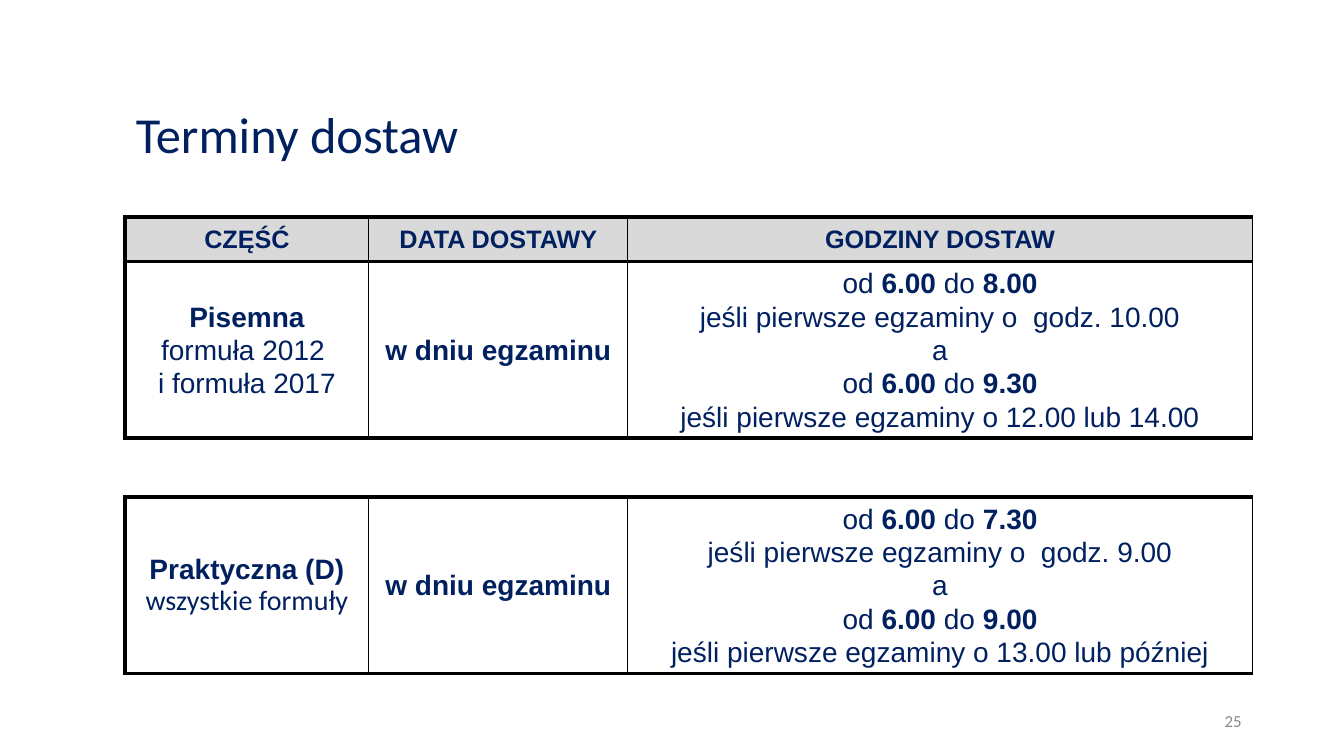
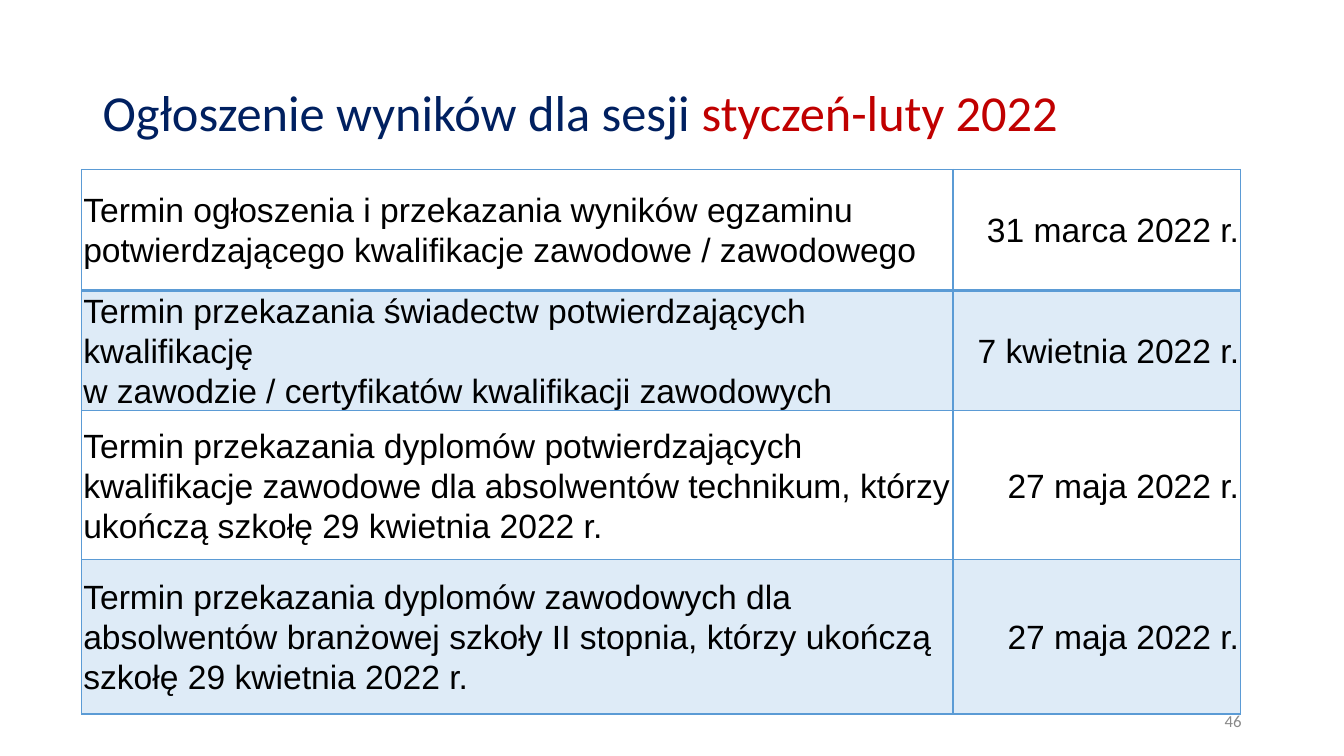
from dataclasses import dataclass

from lxml.etree import SubElement
from pptx import Presentation
from pptx.dml.color import RGBColor
from pptx.enum.text import MSO_ANCHOR, PP_ALIGN
from pptx.oxml.ns import qn
from pptx.slide import Slide
from pptx.table import _Cell
from pptx.text.text import _Paragraph
from pptx.util import Pt

NAVY = RGBColor(0x00, 0x20, 0x60)
RED = RGBColor(0xC0, 0x00, 0x00)
GREY = RGBColor(0x89, 0x89, 0x89)
LIGHT_GREY = RGBColor(0xD9, 0xD9, 0xD9)
BLACK = RGBColor(0x00, 0x00, 0x00)
BLUE = RGBColor(0x5B, 0x9B, 0xD5)
LIGHT_BLUE = RGBColor(0xDE, 0xEB, 0xF7)

HEADING_FONT = "Calibri"
BODY_FONT = "Arial"
LINE_PITCH = 1.19


@dataclass(frozen=True)
class Line:
    """A paragraph; text between asterisks is bold, a newline is a line break."""
    text: str
    font: str = BODY_FONT


@dataclass(frozen=True)
class CellStyle:
    size: float
    color: RGBColor
    border_color: RGBColor
    left: float
    right: float
    top: float
    bottom: float
    side_margin: float
    end_margin: float = 0
    fill: RGBColor | None = None
    align: PP_ALIGN = PP_ALIGN.CENTER


@dataclass(frozen=True)
class Cell:
    lines: tuple[Line, ...]
    style: CellStyle


@dataclass(frozen=True)
class Grid:
    left: float
    top: float
    columns: tuple[float, ...]
    rows: tuple[float, ...]
    cells: list[list[Cell]]


def add_text_box(slide: Slide, left: float, top: float, width: float,
                 height: float) -> _Paragraph:
    """Add a wrapped, vertically centred box and return its first paragraph."""
    frame = slide.shapes.add_textbox(Pt(left), Pt(top), Pt(width), Pt(height)).text_frame
    frame.word_wrap = True
    frame.vertical_anchor = MSO_ANCHOR.MIDDLE
    return frame.paragraphs[0]


def add_title(slide: Slide, left: float, top: float,
              parts: list[tuple[str, RGBColor]]) -> None:
    paragraph = add_text_box(slide, left, top, 800, 56)
    paragraph.font.name = HEADING_FONT
    paragraph.font.size = Pt(36)
    for text, color in parts:
        run = paragraph.add_run()
        run.text = text
        run.font.color.rgb = color


def add_page_number(slide: Slide, number: int) -> None:
    paragraph = add_text_box(slide, 678, 500.4, 216, 28.8)
    paragraph.text = str(number)
    paragraph.alignment = PP_ALIGN.RIGHT
    paragraph.font.name = HEADING_FONT
    paragraph.font.size = Pt(12)
    paragraph.font.color.rgb = GREY


def set_borders(cell: _Cell, style: CellStyle) -> None:
    properties = cell._tc.get_or_add_tcPr()
    widths = {"L": style.left, "R": style.right, "T": style.top, "B": style.bottom}
    for side, width in widths.items():
        border = SubElement(properties, qn(f"a:ln{side}"), w=str(int(Pt(width))))
        fill = SubElement(border, qn("a:solidFill"))
        SubElement(fill, qn("a:srgbClr"), val=str(style.border_color))


def write_line(paragraph: _Paragraph, line: Line, style: CellStyle) -> None:
    paragraph.alignment = style.align
    paragraph.line_spacing = Pt(style.size * LINE_PITCH)
    paragraph.font.name = line.font
    paragraph.font.size = Pt(style.size)
    paragraph.font.color.rgb = style.color
    for part_index, part in enumerate(line.text.split("*")):
        for row_index, text in enumerate(part.split("\n")):
            if row_index:
                paragraph.add_line_break()
            if text:
                run = paragraph.add_run()
                run.text = text
                run.font.bold = part_index % 2 == 1


def fill_cell(cell: _Cell, content: Cell) -> None:
    style = content.style
    set_borders(cell, style)
    if style.fill is None:
        cell.fill.background()
    else:
        cell.fill.solid()
        cell.fill.fore_color.rgb = style.fill
    cell.vertical_anchor = MSO_ANCHOR.MIDDLE
    cell.margin_left = cell.margin_right = Pt(style.side_margin)
    cell.margin_top = cell.margin_bottom = Pt(style.end_margin)
    frame = cell.text_frame
    for index, line in enumerate(content.lines):
        paragraph = frame.add_paragraph() if index else frame.paragraphs[0]
        write_line(paragraph, line, style)


def add_grid(slide: Slide, grid: Grid) -> None:
    table = slide.shapes.add_table(
        len(grid.rows), len(grid.columns), Pt(grid.left), Pt(grid.top),
        Pt(sum(grid.columns)), Pt(sum(grid.rows))).table
    table.first_row = table.horz_banding = False
    for column, width in zip(table.columns, grid.columns):
        column.width = Pt(width)
    for row, height, contents in zip(table.rows, grid.rows, grid.cells):
        row.height = Pt(height)
        for cell, content in zip(row.cells, contents):
            fill_cell(cell, content)


def delivery_row(texts: list[tuple[Line, ...]], size: float,
                 fill: RGBColor | None = None) -> list[Cell]:
    """Build a row with thick lines on the left, above and below."""
    return [
        Cell(lines, CellStyle(size, NAVY, BLACK, 0.75 if column else 3, 0.75, 3, 3,
                              3.6, fill=fill))
        for column, lines in enumerate(texts)
    ]


def result_row(index: int, description: str, date: str) -> list[Cell]:
    top, bottom = (2 if index == 1 else 1), (2 if index == 0 else 1)
    fill = LIGHT_BLUE if index % 2 else None
    return [
        Cell((Line(text),), CellStyle(24, BLACK, BLUE, 1, 1, top, bottom, 1.2,
                                      fill=fill, align=align))
        for text, align in ((description, PP_ALIGN.LEFT), (date, PP_ALIGN.RIGHT))
    ]


DELIVERY_COLUMNS = (174.2, 185, 446)
DELIVERY_DAY = (Line("*w dniu egzaminu*"),)
DELIVERY_HEADER = [(Line(f"*{name}*"),)
                   for name in ("CZĘŚĆ", "DATA DOSTAWY", "GODZINY DOSTAW")]
WRITTEN_PART = [
    (Line("*Pisemna*\nformuła 2012 \ni formuła 2017"),),
    DELIVERY_DAY,
    (Line("od *6.00* do *8.00*\njeśli pierwsze egzaminy o  godz. 10.00"),
     Line("a\nod *6.00* do *9.30*\njeśli pierwsze egzaminy o 12.00 lub 14.00")),
]
PRACTICAL_PART = [
    (Line("*Praktyczna (D)*"), Line("wszystkie formuły", HEADING_FONT)),
    DELIVERY_DAY,
    (Line("od *6.00* do *7.30*\njeśli pierwsze egzaminy o  godz. 9.00"),
     Line("a\nod *6.00* do *9.00*\njeśli pierwsze egzaminy o 13.00 lub później")),
]
RESULTS = [
    ("Termin ogłoszenia i przekazania wyników egzaminu potwierdzającego "
     "kwalifikacje zawodowe / zawodowego", "31 marca 2022 r."),
    ("Termin przekazania świadectw potwierdzających kwalifikację \n"
     "w zawodzie / certyfikatów kwalifikacji zawodowych", "7 kwietnia 2022 r."),
    ("Termin przekazania dyplomów potwierdzających kwalifikacje zawodowe dla "
     "absolwentów technikum, którzy ukończą szkołę 29 kwietnia 2022 r.",
     "27 maja 2022 r."),
    ("Termin przekazania dyplomów zawodowych dla absolwentów branżowej szkoły "
     "II stopnia, którzy ukończą szkołę 29 kwietnia 2022 r.", "27 maja 2022 r."),
]


def build_delivery_slide(slide: Slide) -> None:
    add_title(slide, 90, 67.5, [("Terminy dostaw", NAVY)])
    add_grid(slide, Grid(89.3, 154.8, DELIVERY_COLUMNS, (32, 126), [
        delivery_row(DELIVERY_HEADER, 18, LIGHT_GREY),
        delivery_row(WRITTEN_PART, 20),
    ]))
    add_grid(slide, Grid(89.3, 355, DELIVERY_COLUMNS, (126,),
                         [delivery_row(PRACTICAL_PART, 20)]))
    add_page_number(slide, 25)


def build_results_slide(slide: Slide) -> None:
    add_title(slide, 66.2, 51.5, [("Ogłoszenie wyników dla sesji", NAVY),
                                  (" styczeń-luty 2022", RED)])
    add_grid(slide, Grid(58.3, 121, (622.4, 205.6), (86.4, 85.8, 106.6, 110.2), [
        result_row(index, description, date)
        for index, (description, date) in enumerate(RESULTS)
    ]))
    add_page_number(slide, 46)


def main() -> None:
    presentation = Presentation()
    presentation.slide_width = Pt(960)
    presentation.slide_height = Pt(540)
    blank_layout = presentation.slide_layouts[6]
    for build in (build_delivery_slide, build_results_slide):
        build(presentation.slides.add_slide(blank_layout))
    presentation.save("out.pptx")


if __name__ == "__main__":
    main()
